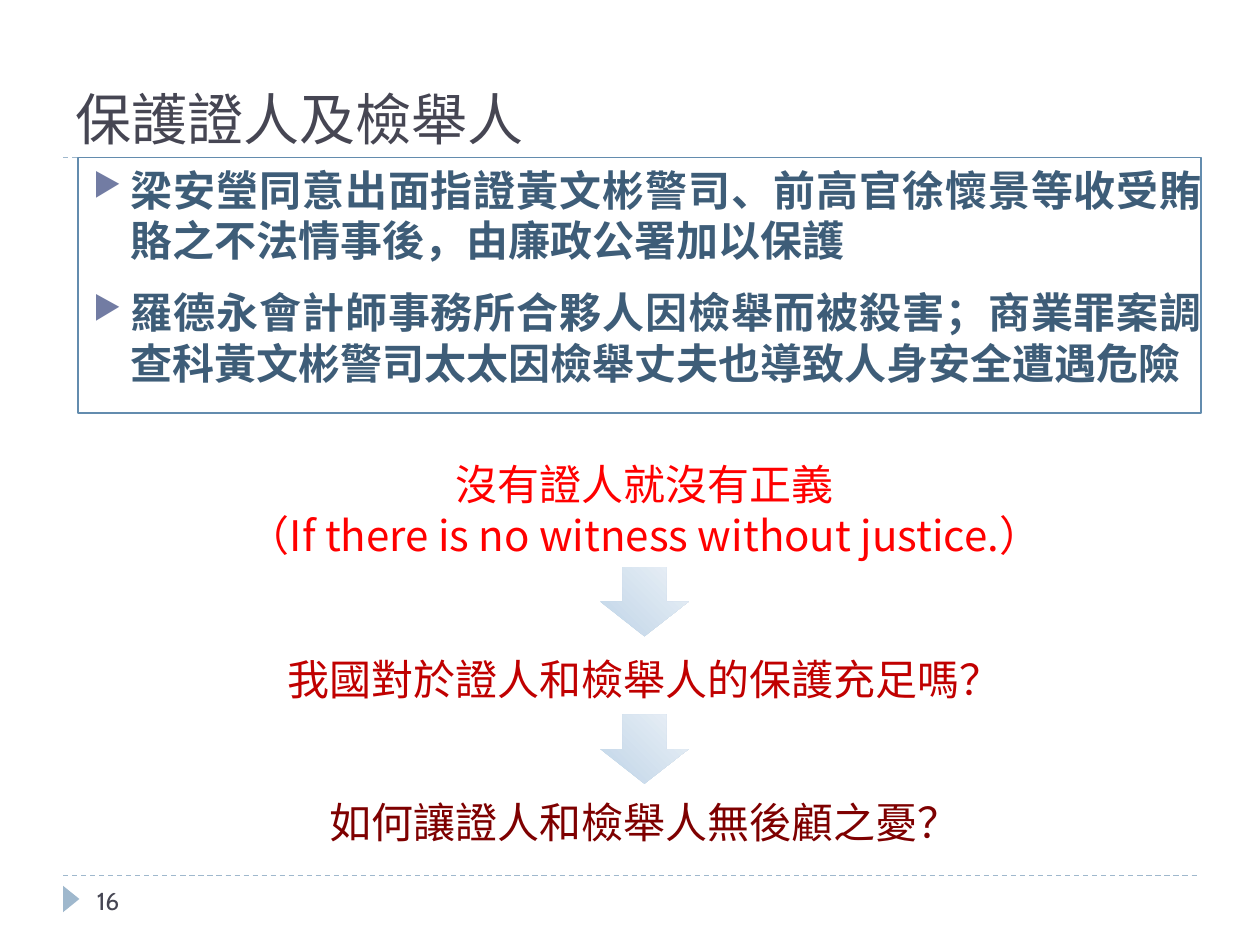
from lxml.etree import SubElement
from pptx import Presentation
from pptx.dml.color import RGBColor
from pptx.enum.dml import MSO_LINE_DASH_STYLE as Dash
from pptx.enum.shapes import MSO_CONNECTOR as Connector, MSO_SHAPE as Shape
from pptx.enum.text import MSO_ANCHOR as Anchor, PP_ALIGN as Align
from pptx.oxml.ns import qn
from pptx.util import Inches, Pt

COLUMNS, ROWS = 100, 75
CELL = Inches(0.1)
CJK, LATIN = "Noto Sans CJK SC", "Cabin"
LEFT, RIGHT = 5, 95
TOP_RULE, BOTTOM_RULE = 12.5, 69.5
POINTS = [
    "梁安瑩同意出面指證黃文彬警司、前高官徐懷景等收受賄賂之不法情事後，由廉政公署加以保護",
    "羅德永會計師事務所合夥人因檢舉而被殺害；商業罪案調查科黃文彬警司太太因檢舉丈夫也導致人身安全遭遇危險",
]
STATEMENTS = [
    ("沒有證人就沒有正義", "FF0000", 0),
    ("（If there is no witness without justice.）", "FF0000", 0),
    ("我國對於證人和檢舉人的保護充足嗎？", "C00000", 53),
    ("如何讓證人和檢舉人無後顧之憂？", "7E0000", 53),
]


def cells(*counts):
    """Turn grid counts into slide lengths."""
    return [round(count * CELL) for count in counts]


def color(value):
    """Turn a hex string into a colour."""
    return RGBColor.from_string(value)


def apply(target, formats):
    """Set every attribute named in a dict of format values."""
    for name, value in formats.items():
        setattr(target, name, value)


def add_frame(page, box, **formats):
    """Add a wrapping text box and return its text frame."""
    frame = page.shapes.add_textbox(*cells(*box)).text_frame
    apply(frame, {"word_wrap": True, **formats})
    return frame


def add_para(frame, index, text, size, fill, font=CJK, bold=False, **formats):
    """Write one paragraph of a single span."""
    para = frame.add_paragraph() if index else frame.paragraphs[0]
    apply(para, formats)
    span = para.add_run()
    span.text = text
    apply(span.font, {"size": Pt(size), "bold": bold, "name": font})
    span.font.color.rgb = color(fill)
    SubElement(span.font._element, qn("a:ea"), typeface=font)
    return para


def add_bullet(para, indent):
    """Give a paragraph a hanging triangle bullet."""
    props = para._p.get_or_add_pPr()
    props.set("marL", str(indent))
    props.set("indent", str(-indent))
    tint = SubElement(props, qn("a:buClr"))
    SubElement(tint, qn("a:srgbClr"), val="727CA3")
    SubElement(props, qn("a:buSzPct"), val="76000")
    SubElement(props, qn("a:buChar"), char="▶")


def add_preset(page, preset, box):
    """Add a preset shape without shadow or outline."""
    shape = page.shapes.add_shape(preset, *cells(*box))
    shape.shadow.inherit = False
    shape.line.fill.background()
    return shape


def add_rule(page, row):
    """Draw a dashed rule across the page at a grid row."""
    rule = page.shapes.add_connector(
        Connector.STRAIGHT, *cells(LEFT, row, RIGHT, row))
    apply(rule.line, {"width": Pt(0.75), "dash_style": Dash.DASH})
    rule.line.color.rgb = color("9FB8CD")
    SubElement(rule._element.spPr, qn("a:effectLst"))


def add_title(page, box):
    """Write the title above its rule."""
    add_rule(page, TOP_RULE)
    frame = add_frame(page, box, vertical_anchor=Anchor.BOTTOM)
    add_para(frame, 0, "保護證人及檢舉人", 32, "464653")


def add_points(page, box):
    """Write the bulleted points and the outline around them."""
    left, top, width, height = box
    frame = add_frame(page, (left + 0.2, top, width + 0.9, height))
    for index, text in enumerate(POINTS):
        para = add_para(frame, index, text, 24, "3E5D78", bold=True,
                        alignment=Align.JUSTIFY, line_spacing=Pt(29),
                        space_before=Pt(6), space_after=Pt(6))
        add_bullet(para, Inches(0.3))
    outline = add_preset(page, Shape.RECTANGLE, box)
    outline.fill.background()
    outline.line.color.rgb = color("638CAE")
    outline.line.width = Pt(1)


def add_arrow(page, box):
    """Draw a down arrow with a diagonal gradient."""
    arrow = add_preset(page, Shape.DOWN_ARROW, box)
    arrow.fill.gradient()
    arrow.fill.gradient_angle = 45
    for stop, tint in zip(arrow.fill.gradient_stops, ("BFD4E7", "EBF1F7")):
        stop.color.rgb = color(tint)


def add_statements(page, box):
    """Write the centred statements with arrows between them."""
    left, top, width, height = box
    frame = add_frame(page, box)
    for index, (text, fill, gap) in enumerate(STATEMENTS):
        add_para(frame, index, text, 24, fill, alignment=Align.CENTER,
                 line_spacing=Pt(29), space_before=Pt(gap))
    for step in range(2):
        add_arrow(page, (left + width / 2 - 3.5, top + 9.1 + step * 11.7, 7, 5.5))


def add_footer(page, box):
    """Draw the bottom rule, its marker and the page number."""
    left, top, width, height = box
    add_rule(page, top)
    marker = add_preset(page, Shape.ISOSCELES_TRIANGLE,
                        (left - 0.4, top + 1.2, 2.1, 1.3))
    marker.rotation = 90
    marker.fill.solid()
    marker.fill.fore_color.rgb = color("9FB8CD")
    frame = add_frame(page, (left + 1.7, top, width, height),
                      vertical_anchor=Anchor.MIDDLE)
    add_para(frame, 0, "16", 14, "464653", font=LATIN)


def main():
    """Build the slide and save it."""
    deck = Presentation()
    deck.slide_width, deck.slide_height = cells(COLUMNS, ROWS)
    page = deck.slides.add_slide(deck.slide_layouts[6])
    add_title(page, (LEFT, 1.7, RIGHT - LEFT, TOP_RULE - 1.7))
    add_points(page, (6.2, TOP_RULE, 89.1, 20.3))
    add_statements(page, (14.8, 35.9, 72.7, 32))
    add_footer(page, (LEFT, BOTTOM_RULE, 21.7, 4))
    deck.save("out.pptx")


if __name__ == "__main__":
    main()
